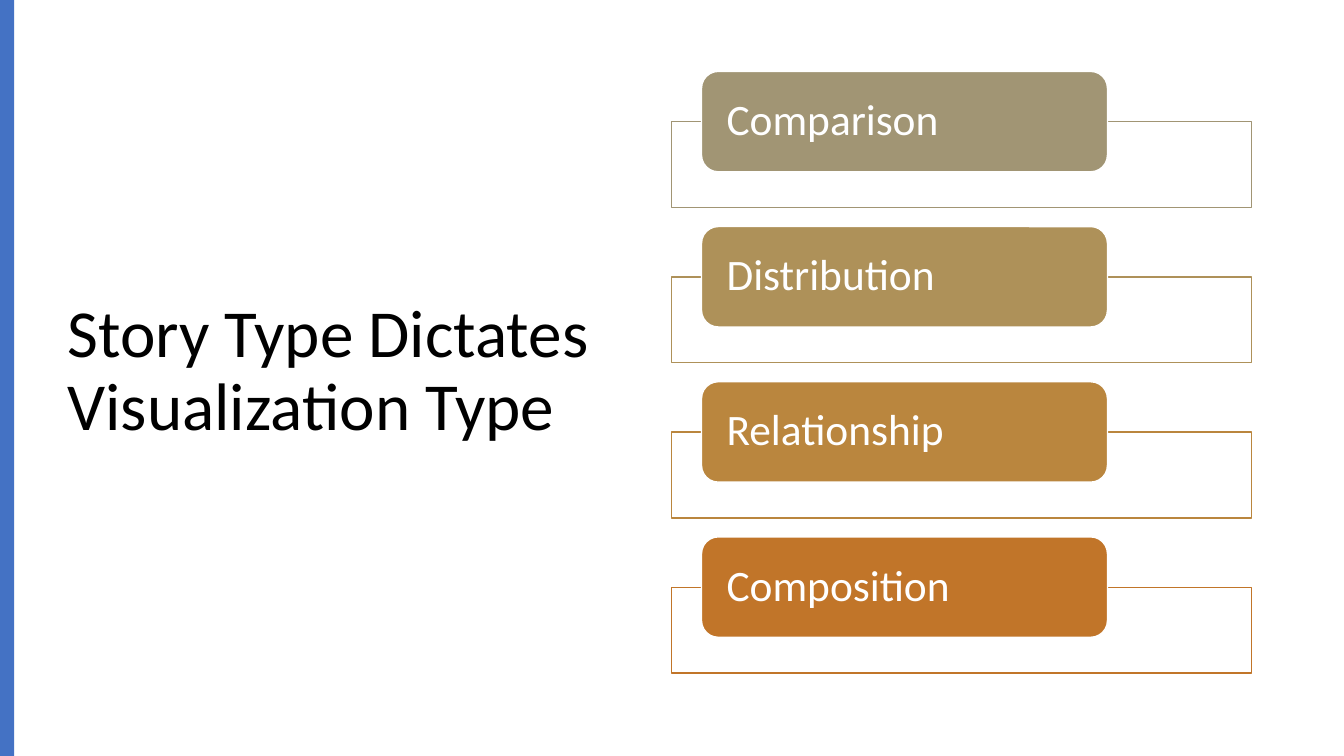
from lxml.etree import SubElement
from pptx import Presentation
from pptx.dml.color import RGBColor
from pptx.enum.shapes import MSO_SHAPE as SHAPE
from pptx.enum.text import MSO_ANCHOR as ANCHOR, PP_ALIGN as ALIGN
from pptx.oxml.ns import qn
from pptx.util import Cm, Pt

WHITE = RGBColor(0xFF, 0xFF, 0xFF)
BLACK = RGBColor(0x00, 0x00, 0x00)
BLUE = RGBColor(0x44, 0x72, 0xC4)
KHAKI = RGBColor(0xA1, 0x95, 0x74)
SAND = RGBColor(0xAE, 0x91, 0x59)
OCHRE = RGBColor(0xBA, 0x86, 0x3E)
RUST = RGBColor(0xC1, 0x75, 0x29)

STORY_TYPES = [
    ("Comparison", KHAKI),
    ("Distribution", SAND),
    ("Relationship", OCHRE),
    ("Composition", RUST),
]
FIRST_TOP = 1.8
PITCH = 3.91


def write(tf, text, size, color, font="Calibri", inset=0.25, inset_y=0.13):
    tf.word_wrap = True
    tf.vertical_anchor = ANCHOR.MIDDLE
    tf.margin_left = tf.margin_right = Cm(inset)
    tf.margin_top = tf.margin_bottom = Cm(inset_y)
    p = tf.paragraphs[0]
    p.alignment = ALIGN.LEFT
    p.line_spacing = 0.9
    r = p.add_run()
    r.text = text
    r.font.name = font
    r.font.size = Pt(size)
    r.font.color.rgb = color


class StorySlide:
    line_width = Pt(1)

    def __init__(self, prs):
        self.s = prs.slides.add_slide(prs.slide_layouts[6])

    def title(self, text, x, y, w, h):
        tb = self.s.shapes.add_textbox(Cm(x), Cm(y), Cm(w), Cm(h))
        write(tb.text_frame, text, 48, BLACK)

    def box(self, kind, x, y, w, h, fill, line=None, alpha=None):
        sp = self.s.shapes.add_shape(kind, Cm(x), Cm(y), Cm(w), Cm(h))
        sp.shadow.inherit = False
        sp.fill.solid()
        sp.fill.fore_color.rgb = fill
        if alpha is not None:
            color = sp.fill._xPr.find(qn("a:solidFill"))[0]
            SubElement(color, qn("a:alpha"), val=str(alpha * 1000))
        if line is None:
            sp.line.fill.background()
        else:
            sp.line.color.rgb = line
            sp.line.width = self.line_width
        return sp

    def story_type(self, text, color, y):
        self.box(SHAPE.RECTANGLE, 16.93, y + 1.27, 14.61, 2.16, WHITE, color, alpha=90)
        label = self.box(SHAPE.ROUNDED_RECTANGLE, 17.68, y, 10.23, 2.53, color, WHITE)
        write(label.text_frame, text, 31, WHITE, inset=0.51, inset_y=0)


def main():
    prs = Presentation()
    prs.slide_width, prs.slide_height = Cm(33.87), Cm(19.05)
    slide = StorySlide(prs)
    slide.title("Story Type Dictates Visualization Type", 1.45, 1.73, 14.4, 15.29)
    slide.box(SHAPE.RECTANGLE, 0, 0, 0.36, 19.05, BLUE)
    for i, (text, color) in enumerate(STORY_TYPES):
        slide.story_type(text, color, FIRST_TOP + i * PITCH)
    prs.save("out.pptx")


if __name__ == "__main__":
    main()
